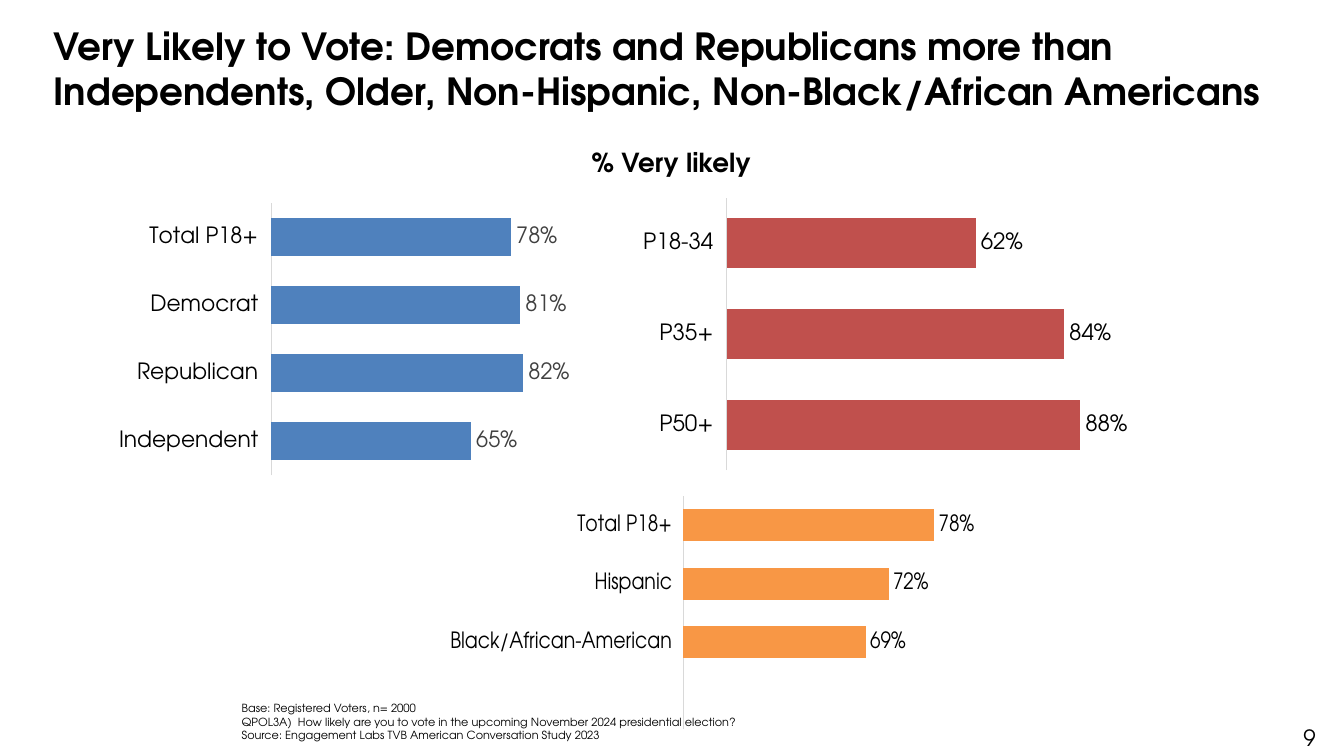
"""Build the slide on likelihood to vote, with three bar charts by group."""
from dataclasses import dataclass
from typing import Optional

from lxml import etree
from pptx import Presentation
from pptx.chart.data import CategoryChartData
from pptx.dml.color import RGBColor
from pptx.enum.chart import XL_CHART_TYPE, XL_LABEL_POSITION, XL_TICK_LABEL_POSITION, XL_TICK_MARK
from pptx.enum.text import MSO_ANCHOR, PP_ALIGN
from pptx.oxml.ns import qn
from pptx.slide import Slide
from pptx.util import Pt

BAR = XL_CHART_TYPE.BAR_CLUSTERED
OUTSIDE = XL_LABEL_POSITION.OUTSIDE_END
LOW = XL_TICK_LABEL_POSITION.LOW
NO_TICK = XL_TICK_MARK.NONE
TOP, MIDDLE, BOTTOM = MSO_ANCHOR.TOP, MSO_ANCHOR.MIDDLE, MSO_ANCHOR.BOTTOM
LEFT, CENTER = PP_ALIGN.LEFT, PP_ALIGN.CENTER


@dataclass(frozen=True)
class Theme:
    font: str = "TeX Gyre Adventor"
    text: str = "000000"
    muted: str = "404040"
    axis: str = "D9D9D9"
    party: str = "4F81BD"
    age: str = "C0504D"
    ethnicity: str = "F89745"
    title_size: float = 20
    heading_size: float = 14
    label_size: float = 12
    note_size: float = 6


THEME = Theme()


@dataclass(frozen=True)
class Box:
    left: float
    top: float
    width: float
    height: float

    def lengths(self) -> tuple:
        return tuple(Pt(value) for value in (self.left, self.top, self.width, self.height))


@dataclass(frozen=True)
class TextBlock:
    box: Box
    lines: tuple
    size: float
    bold: bool = False
    anchor: MSO_ANCHOR = TOP
    alignment: PP_ALIGN = LEFT


@dataclass(frozen=True)
class BarChart:
    box: Box
    categories: tuple
    values: tuple
    color: str
    label_color: str = THEME.text
    minimum: float = 0
    reverse: bool = False
    plot: Optional[tuple] = None


TEXTS = (
    TextBlock(Box(21.6, 2.2, 686.2, 68.4),
              ("Very Likely to Vote: Democrats and Republicans more than "
               "Independents, Older, Non-Hispanic, Non-Black/African Americans",),
              THEME.title_size, bold=True, anchor=MIDDLE),
    TextBlock(Box(181.4, 74.9, 356.4, 24.5), ("% Very likely",),
              THEME.heading_size, bold=True, alignment=CENTER),
    TextBlock(Box(122.4, 372.2, 586.8, 28.8),
              ("Base: Registered Voters, n= 2000",
               "QPOL3A)  How likely are you to vote in the upcoming November 2024 presidential election?",
               "Source: Engagement Labs TVB American Conversation Study 2023"),
              THEME.note_size, anchor=BOTTOM),
    TextBlock(Box(691.2, 384.5, 54, 10), ("9",), THEME.label_size),
)

CHARTS = (
    BarChart(Box(59, 105.8, 246.2, 151.9),
             ("Independent", "Republican", "Democrat", "Total P18+"),
             (0.65, 0.82, 0.81, 0.78), THEME.party, label_color=THEME.muted),
    BarChart(Box(339.1, 103, 270.7, 151.9), ("P50+", "P35+", "P18-34"),
             (0.88, 0.84, 0.62), THEME.age),
    BarChart(Box(241.2, 262.1, 280.8, 128.9),
             ("Total P18+", "Hispanic", "Black/African-American", ""),
             (0.78, 0.72, 0.69, None), THEME.ethnicity, minimum=0.45, reverse=True,
             plot=(0.36, 0.03, 0.6, 0.97)),
)


def apply_format(target: object, values: dict) -> None:
    for name, value in values.items():
        setattr(target, name, value)


def style_font(font: object, size: float, color: str = THEME.text, bold: bool = False) -> None:
    apply_format(font, {"name": THEME.font, "size": Pt(size), "bold": bold})
    font.color.rgb = RGBColor.from_string(color)


def add_text(slide: Slide, block: TextBlock) -> None:
    frame = slide.shapes.add_textbox(*block.box.lengths()).text_frame
    apply_format(frame, {"word_wrap": True, "vertical_anchor": block.anchor,
                         "text": "\n".join(block.lines)})
    for paragraph in frame.paragraphs:
        paragraph.alignment = block.alignment
        for run in paragraph.runs:
            style_font(run.font, block.size, bold=block.bold)


def set_plot_layout(plot_area: etree._Element, plot: tuple) -> None:
    layout = plot_area.find(qn("c:layout"))
    if layout is None:
        layout = etree.Element(qn("c:layout"))
        plot_area.insert(0, layout)
    manual = etree.SubElement(layout, qn("c:manualLayout"))
    settings = [("layoutTarget", "inner"), ("xMode", "edge"), ("yMode", "edge")]
    settings += zip("xywh", plot)
    for name, value in settings:
        etree.SubElement(manual, qn(f"c:{name}")).set("val", str(value))


def add_bar_chart(slide: Slide, bars: BarChart) -> None:
    data = CategoryChartData(number_format="0%")
    data.categories = bars.categories
    data.add_series("Series 1", bars.values)
    chart = slide.shapes.add_chart(BAR, *bars.box.lengths(), data).chart
    apply_format(chart, {"has_legend": False, "has_title": False})
    style_font(chart.font, THEME.label_size)

    apply_format(chart.value_axis, {"visible": False, "has_major_gridlines": False,
                                    "minimum_scale": bars.minimum})
    axis = chart.category_axis
    apply_format(axis, {"major_tick_mark": NO_TICK, "minor_tick_mark": NO_TICK,
                        "tick_label_position": LOW, "has_major_gridlines": False,
                        "reverse_order": bars.reverse})
    style_font(axis.tick_labels.font, THEME.label_size)
    axis.format.line.width = Pt(0.75)
    axis.format.line.color.rgb = RGBColor.from_string(THEME.axis)

    plot = chart.plots[0]
    apply_format(plot, {"gap_width": 82, "vary_by_categories": False, "has_data_labels": True})
    apply_format(plot.data_labels, {"show_value": True, "number_format": "0%",
                                    "number_format_is_linked": False, "position": OUTSIDE})
    style_font(plot.data_labels.font, THEME.label_size, bars.label_color)
    fill = plot.series[0].format.fill
    fill.solid()
    fill.fore_color.rgb = RGBColor.from_string(bars.color)
    if bars.plot:
        set_plot_layout(chart.element.find(f".//{qn('c:plotArea')}"), bars.plot)


def main() -> None:
    presentation = Presentation()
    apply_format(presentation, {"slide_width": Pt(720), "slide_height": Pt(405)})
    slide = presentation.slides.add_slide(presentation.slide_layouts[6])
    for bars in CHARTS:
        add_bar_chart(slide, bars)
    for block in TEXTS:
        add_text(slide, block)
    presentation.save("out.pptx")


if __name__ == "__main__":
    main()
